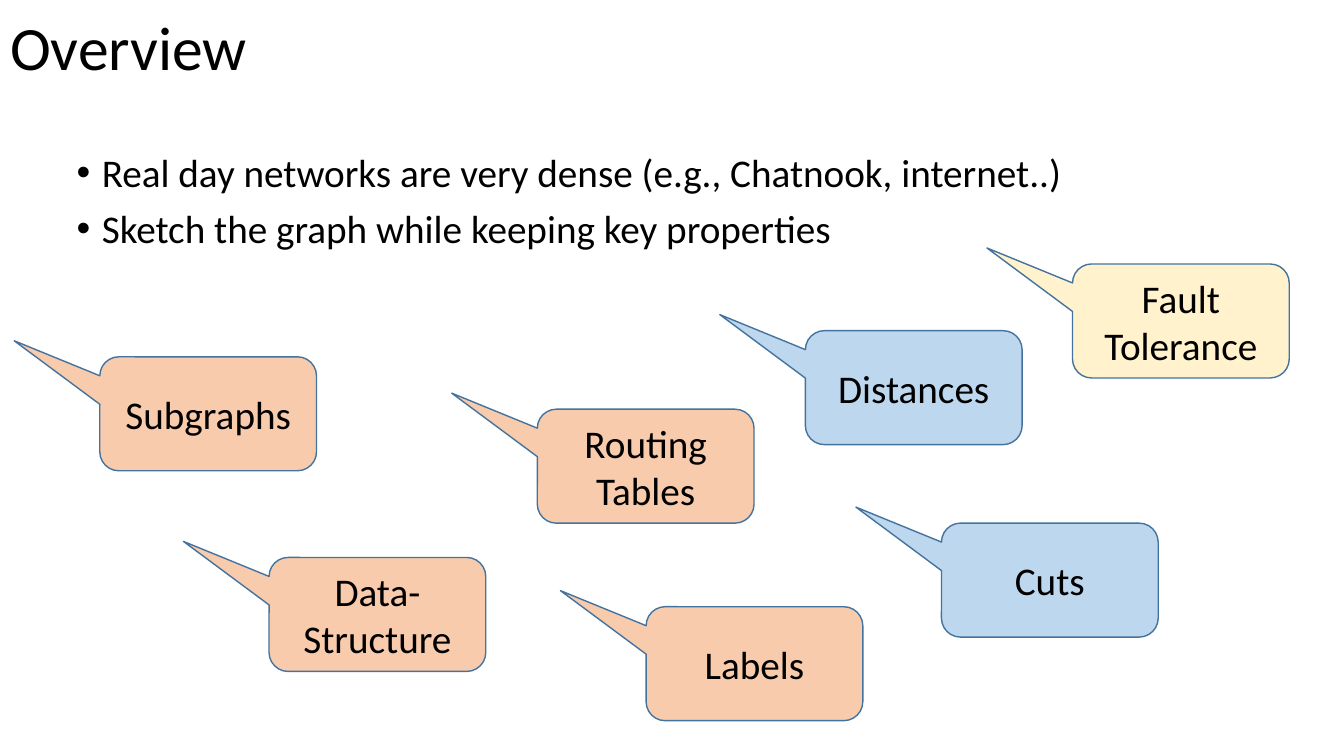
from pptx import Presentation
from pptx.dml.color import RGBColor
from pptx.enum.shapes import MSO_SHAPE
from pptx.enum.text import MSO_ANCHOR, MSO_AUTO_SIZE, PP_ALIGN
from pptx.util import Pt

CALLOUT = MSO_SHAPE.ROUNDED_RECTANGULAR_CALLOUT
MIDDLE, TOP = MSO_ANCHOR.MIDDLE, MSO_ANCHOR.TOP
LEFT, CENTER = PP_ALIGN.LEFT, PP_ALIGN.CENTER
NO_FIT = MSO_AUTO_SIZE.NONE

COLORS = {
    "ink": "000000",
    "edge": "43739E",
    "peach": "F8CBAD",
    "blue": "BDD7EE",
    "cream": "FFF2CC",
}
FONT = "Calibri"
WIDTH, HEIGHT = 154.8, 81.4
TAIL = (-0.895, -0.641, 0.167)

POINTS = [
    "Real day networks are very dense (e.g., Chatnook, internet..)",
    "Sketch the graph while keeping key properties",
]
# Text, left, top, fill
TOPICS = [
    ("Subgraphs", 71.3, 254.9, "peach"),
    ("Data-Structure", 192.2, 398.2, "peach"),
    ("Routing Tables", 383.8, 292.3, "peach"),
    ("Labels", 461.5, 433.4, "peach"),
    ("Distances", 575.3, 236.2, "blue"),
    ("Cuts", 672.5, 373.7, "blue"),
    ("Fault Tolerance", 766.1, 188.6, "cream"),
]


def color(name):
    return RGBColor.from_string(COLORS[name])


def write(shape, text, size=28, align=LEFT, anchor=MIDDLE,
          spacing=None, before=0, hang=None):
    """Fill a shape with one paragraph per line of text."""
    frame = shape.text_frame
    frame.text = text
    frame.word_wrap = True
    frame.auto_size = NO_FIT
    frame.vertical_anchor = anchor
    for para in frame.paragraphs:
        para.alignment = align
        para.line_spacing = spacing
        para.space_before = Pt(before)
        if hang:
            props = para._p.get_or_add_pPr()
            props.set("marL", str(Pt(hang)))
            props.set("indent", str(Pt(-hang)))
        font = para.runs[0].font
        font.name, font.size = FONT, Pt(size)
        font.color.rgb = color("ink")


def place(shape, left, top, width, height):
    shape.left, shape.top = Pt(left), Pt(top)
    shape.width, shape.height = Pt(width), Pt(height)


def callout(slide, text, left, top, fill):
    shape = slide.shapes.add_shape(
        CALLOUT, Pt(left), Pt(top), Pt(WIDTH), Pt(HEIGHT))
    for i, value in enumerate(TAIL):
        shape.adjustments[i] = value
    shape.shadow.inherit = False
    shape.fill.solid()
    shape.fill.fore_color.rgb = color(fill)
    shape.line.color.rgb = color("edge")
    shape.line.width = Pt(1)
    write(shape, text, align=CENTER)


def main():
    deck = Presentation()
    deck.slide_width, deck.slide_height = Pt(960), Pt(540)
    slide = deck.slides.add_slide(deck.slide_layouts[1])

    # Title and list
    title, body = slide.placeholders
    place(title, 0, -15.8, 828, 104.4)
    write(title, "Overview", size=44, spacing=0.9)
    place(body, 47.5, 105.8, 828, 342.7)
    write(body, "\n".join(POINTS), anchor=TOP,
          spacing=0.9, before=10, hang=18)

    # Topic callouts
    for topic in TOPICS:
        callout(slide, *topic)

    deck.save("out.pptx")


if __name__ == "__main__":
    main()
